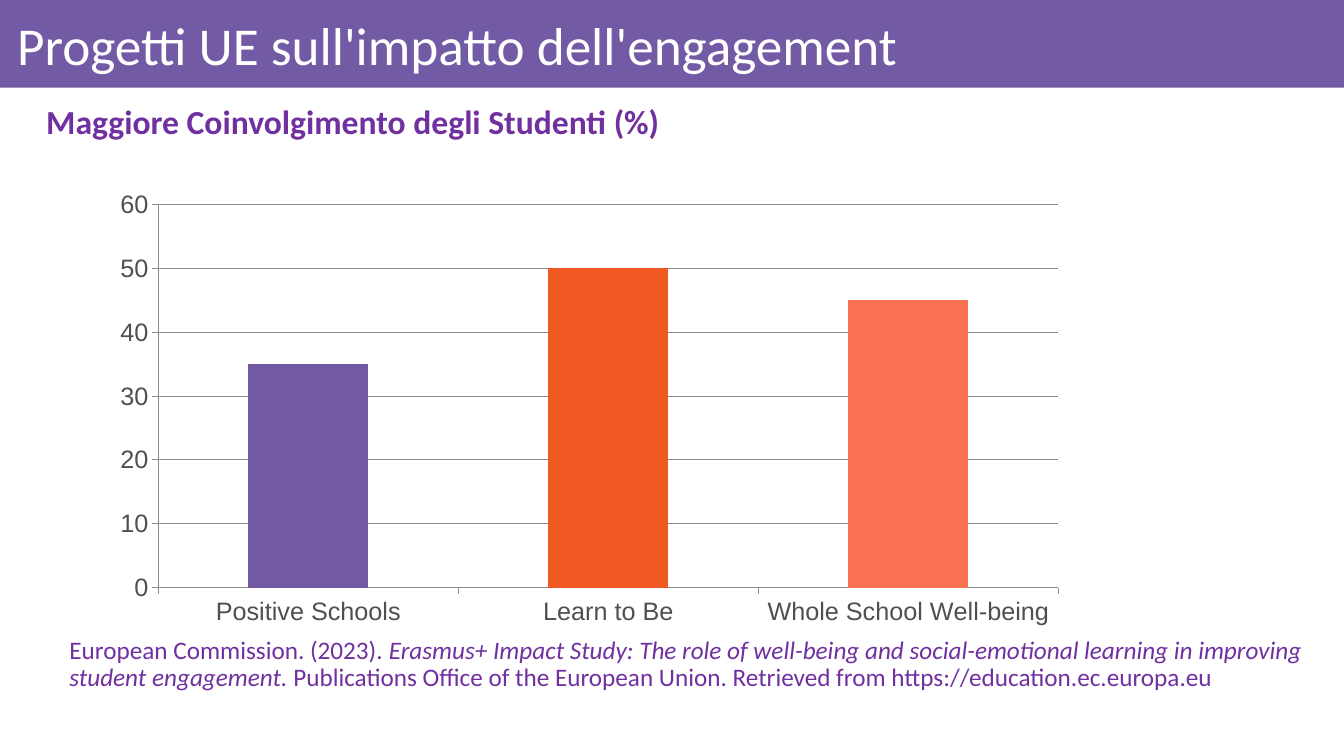
from pptx import Presentation
from pptx.chart.data import CategoryChartData
from pptx.dml.color import RGBColor
from pptx.enum import chart as ch, shapes, text
from pptx.util import Inches, Pt

VIOLET = RGBColor(0x73, 0x5A, 0xA5)
PURPLE = RGBColor(0x70, 0x30, 0xA0)
ORANGE = RGBColor(0xF0, 0x5A, 0x22)
CORAL = RGBColor(0xFA, 0x72, 0x52)
WHITE = RGBColor(0xFF, 0xFF, 0xFF)
LABEL_GREY = RGBColor(0x4F, 0x4F, 0x50)
LINE_GREY = RGBColor(0x8B, 0x8B, 0x8B)

ENGAGEMENT = [
    ("Positive Schools", 35, VIOLET),
    ("Learn to Be", 50, ORANGE),
    ("Whole School Well-being", 45, CORAL),
]
CITATION = [
    ("European Commission. (2023). ", False),
    ("Erasmus+ Impact Study: The role of well-being and social-emotional "
     "learning in improving student engagement.", True),
    (" Publications Office of the European Union. Retrieved from "
     "https://education.ec.europa.eu", False),
]


def style_paragraph(paragraph, size, color, bold=False):
    paragraph.alignment = text.PP_ALIGN.LEFT
    paragraph.line_spacing = 0.9
    font = paragraph.font
    font.name, font.size, font.bold = "Calibri", Pt(size), bold
    font.color.rgb = color


def add_title_band(slide, width):
    band = slide.shapes.add_shape(
        shapes.MSO_SHAPE.RECTANGLE, 0, 0, width, Inches(0.87))
    band.shadow.inherit = False
    band.fill.solid()
    band.fill.fore_color.rgb = VIOLET
    band.line.fill.background()
    # Send the band behind the title
    slide.shapes._spTree.insert(2, band._element)


def set_title(slide, wording):
    title = slide.shapes.title
    title.left, title.top = Inches(0.11), Inches(0.09)
    title.width, title.height = Inches(13.06), Inches(0.78)
    frame = title.text_frame
    frame.text = wording
    frame.auto_size = text.MSO_AUTO_SIZE.NONE
    frame.vertical_anchor = text.MSO_ANCHOR.MIDDLE
    frame.margin_left = frame.margin_right = Inches(0.06)
    frame.margin_top = frame.margin_bottom = Inches(0.06)
    style_paragraph(frame.paragraphs[0], 38, WHITE)


def add_text(slide, left, top, width, height, runs, size, bold=False):
    box = slide.shapes.add_textbox(
        Inches(left), Inches(top), Inches(width), Inches(height))
    frame = box.text_frame
    frame.word_wrap = True
    paragraph = frame.paragraphs[0]
    style_paragraph(paragraph, size, PURPLE, bold)
    for wording, italic in runs:
        run = paragraph.add_run()
        run.text = wording
        if italic:
            run.font.italic = True
    return frame


def style_line(line):
    line.color.rgb = LINE_GREY
    line.width = Pt(0.75)


def add_engagement_chart(slide):
    data = CategoryChartData()
    data.categories = [project for project, _, _ in ENGAGEMENT]
    data.add_series("Series 1", [value for _, value, _ in ENGAGEMENT])
    chart = slide.shapes.add_chart(
        ch.XL_CHART_TYPE.COLUMN_CLUSTERED, Inches(1), Inches(1.8),
        Inches(9.69), Inches(4.5), data).chart
    chart.has_title = False
    chart.has_legend = False
    chart.font.name, chart.font.size = "Arial", Pt(18)
    chart.font.color.rgb = LABEL_GREY

    # Axes and gridlines
    for axis in (chart.category_axis, chart.value_axis):
        axis.major_tick_mark = ch.XL_TICK_MARK.OUTSIDE
        axis.minor_tick_mark = ch.XL_TICK_MARK.NONE
        style_line(axis.format.line)
    values = chart.value_axis
    values.minimum_scale, values.maximum_scale, values.major_unit = 0, 60, 10
    values.has_major_gridlines = True
    style_line(values.major_gridlines.format.line)

    # One colour per project
    plot = chart.plots[0]
    plot.gap_width = 150
    plot.vary_by_categories = False
    for index, (_, _, color) in enumerate(ENGAGEMENT):
        fill = plot.series[0].points[index].format.fill
        fill.solid()
        fill.fore_color.rgb = color


def main():
    prs = Presentation()
    prs.slide_width, prs.slide_height = Inches(13.33), Inches(7.5)
    slide = prs.slides.add_slide(prs.slide_layouts[5])

    # Heading
    add_title_band(slide, prs.slide_width)
    set_title(slide, "Progetti UE sull'impatto dell'engagement")
    subtitle = add_text(slide, 0.36, 0.93, 12.81, 0.6,
                        [("Maggiore Coinvolgimento degli Studenti (%)", False)],
                        24, bold=True)
    subtitle.vertical_anchor = text.MSO_ANCHOR.MIDDLE

    # Chart and its reference
    add_engagement_chart(slide)
    add_text(slide, 0.59, 6.28, 12.58, 0.7, CITATION, 18)

    prs.save("out.pptx")


if __name__ == "__main__":
    main()
